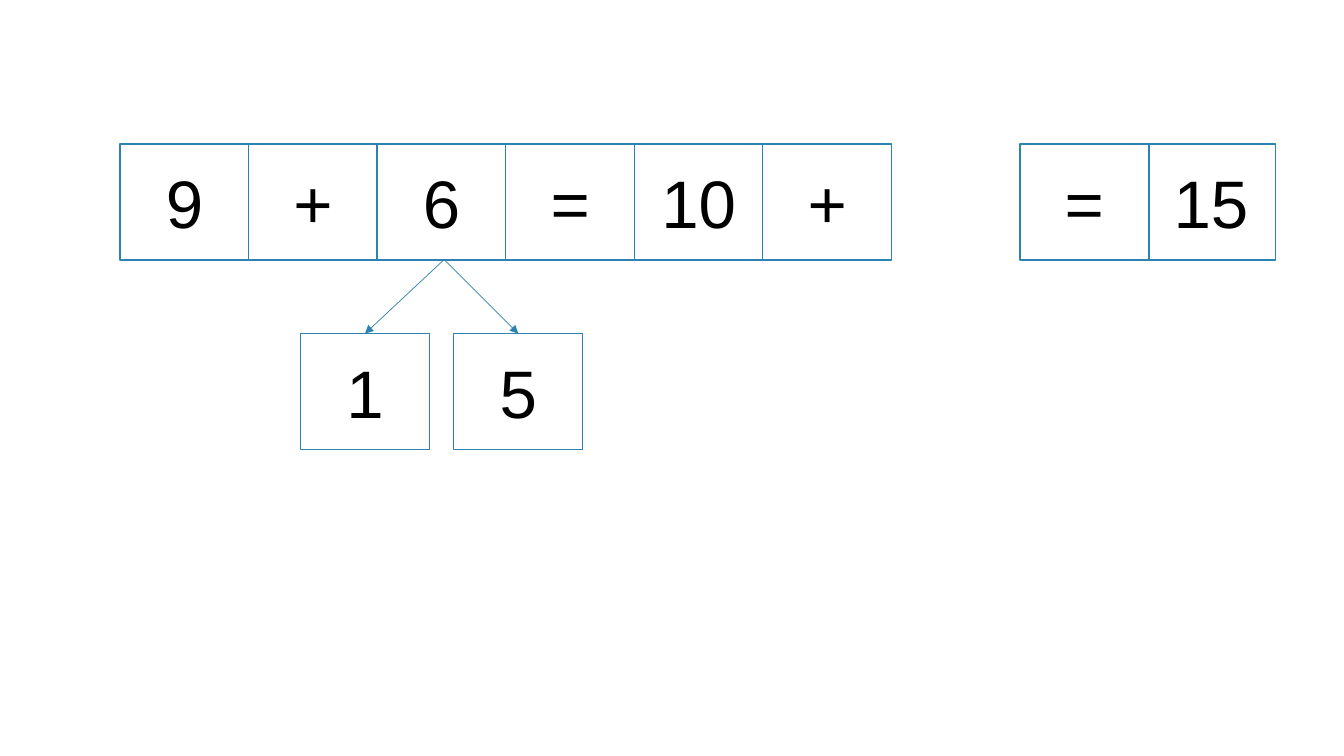
from pptx import Presentation
from pptx.dml.color import RGBColor
from pptx.enum.shapes import MSO_CONNECTOR, MSO_SHAPE
from pptx.enum.text import MSO_ANCHOR, PP_ALIGN
from pptx.oxml.ns import qn
from pptx.util import Inches, Pt
from lxml import etree

RECT = MSO_SHAPE.RECTANGLE
LINE = MSO_CONNECTOR.STRAIGHT
MIDDLE = MSO_ANCHOR.MIDDLE
CENTER = PP_ALIGN.CENTER

BLUE = RGBColor(0x2E, 0x82, 0xAF)
WHITE = RGBColor(0xFF, 0xFF, 0xFF)
BLACK = RGBColor(0x00, 0x00, 0x00)

CARD_W, CARD_H = 1.28, 1.15
SUM_X, SUM_Y, STEP = 1.19, 1.43, 1.275
PART_Y = 3.31


def put_text(frame, text, size=48, color=BLACK, font="Arial", align=CENTER):
    frame.word_wrap = True
    frame.vertical_anchor = MIDDLE
    para = frame.paragraphs[0]
    para.alignment = align
    run = para.add_run()
    run.text = text
    run.font.size = Pt(size)
    run.font.name = font
    run.font.color.rgb = color


class Board:
    def __init__(self, slide, line=BLUE, fill=WHITE):
        self.slide = slide
        self.line = line
        self.fill = fill

    def stroke(self, shape, width):
        shape.line.color.rgb = self.line
        shape.line.width = Pt(width)

    def card(self, text, x, y):
        card = self.slide.shapes.add_shape(
            RECT, Inches(x), Inches(y), Inches(CARD_W), Inches(CARD_H))
        card.shadow.inherit = False
        card.fill.solid()
        card.fill.fore_color.rgb = self.fill
        self.stroke(card, 1)
        put_text(card.text_frame, text)

    def arrow(self, x1, y1, x2, y2):
        arrow = self.slide.shapes.add_connector(
            LINE, Inches(x1), Inches(y1), Inches(x2), Inches(y2))
        self.stroke(arrow, 0.5)
        props = arrow.line._get_or_add_ln()
        etree.SubElement(props, qn("a:tailEnd"), type="triangle")
        etree.SubElement(arrow._element.spPr, qn("a:effectLst"))


def main():
    deck = Presentation()
    deck.slide_width = Inches(13.33)
    deck.slide_height = Inches(7.5)
    board = Board(deck.slides.add_slide(deck.slide_layouts[6]))

    board.card("15", 11.37, SUM_Y)
    # Slot 6 of the sum stays open for the missing number.
    for slot, text in enumerate(["9", "+", "6", "=", "10", "+", None, "="]):
        if text:
            board.card(text, SUM_X + slot * STEP, SUM_Y)

    for text, x, start in [("1", 2.98, 4.4), ("5", 4.5, 4.41)]:
        board.card(text, x, PART_Y)
        board.arrow(start, SUM_Y + CARD_H, x + CARD_W / 2, PART_Y)

    deck.save("out.pptx")


if __name__ == "__main__":
    main()
